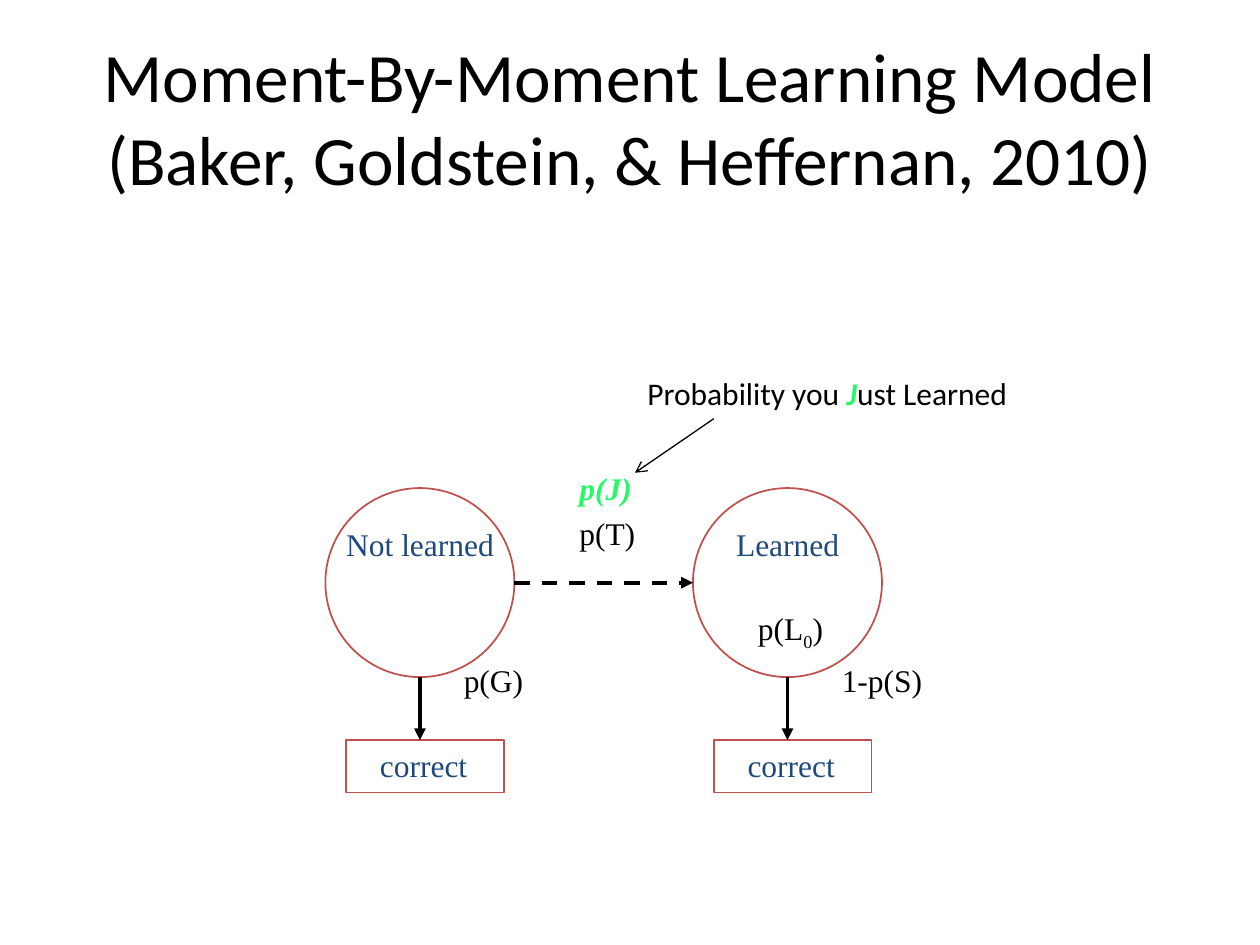
"""Build the Moment-By-Moment Learning Model slide."""
from lxml import etree
from pptx import Presentation
from pptx.dml.color import RGBColor
from pptx.enum.dml import MSO_LINE
from pptx.enum.shapes import MSO_CONNECTOR, MSO_SHAPE
from pptx.enum.text import MSO_ANCHOR, PP_ALIGN
from pptx.oxml.ns import qn
from pptx.util import Cm, Pt

STRAIGHT, DASH = MSO_CONNECTOR.STRAIGHT, MSO_LINE.DASH
OVAL, RECTANGLE = MSO_SHAPE.OVAL, MSO_SHAPE.RECTANGLE
LEFT, CENTER = PP_ALIGN.LEFT, PP_ALIGN.CENTER
TOP, MIDDLE = MSO_ANCHOR.TOP, MSO_ANCHOR.MIDDLE
BLACK, NAVY, RED, GREEN = "000000", "1F497D", "C0504D", "28F868"
SERIF = {"name": "Times New Roman", "size": Pt(18)}
SANS = {"name": "Calibri", "size": Pt(18)}
TITLE = {"name": "Calibri", "size": Pt(39.6)}
EMPHASIS = {"bold": True, "italic": True}

color = RGBColor.from_string
prs = Presentation()
prs.slide_width, prs.slide_height = Cm(25.4), Cm(19.05)
slide = prs.slides.add_slide(prs.slide_layouts[6])


def write(box, parts, align=LEFT, anchor=TOP):
    frame = slide.shapes.add_textbox(*map(Cm, box)).text_frame
    frame.word_wrap, frame.vertical_anchor = True, anchor
    paragraph = frame.paragraphs[0]
    paragraph.alignment = align
    runs = []
    for words, ink, font_format in parts:
        if runs and words.startswith("\v"):
            paragraph.add_line_break()
        run = paragraph.add_run()
        run.text = words.lstrip("\v")
        run.font.color.rgb = color(ink)
        for attribute, value in font_format.items():
            setattr(run.font, attribute, value)
        runs.append(run)
    return runs


def arrow(start, end, width, head, dash=None):
    connector = slide.shapes.add_connector(STRAIGHT, *map(Cm, start + end))
    connector.line.color.rgb = color(BLACK)
    connector.line.width = Pt(width)
    if dash:
        connector.line.dash_style = dash
    etree.SubElement(connector.line._get_or_add_ln(), qn("a:tailEnd"), type=head)
    etree.SubElement(connector._element.spPr, qn("a:effectLst"))


write((1.27, 0.76, 22.86, 3.18),
      [("Moment-By-Moment Learning Model", BLACK, TITLE),
       ("\v(Baker, Goldstein, & Heffernan, 2010)", BLACK, TITLE)],
      CENTER, MIDDLE)

diameter, state_top, answer_top = 3.81, 9.84, 14.92
state_bottom = state_top + diameter
not_learned_left, learned_left = 6.56, 13.97

for state_left, state, chance, chance_left in (
        (not_learned_left, "Not learned", "p(G)", 9.1),
        (learned_left, "Learned", "1-p(S)", 16.72)):
    for kind, box in (
            (OVAL, (state_left, state_top, diameter, diameter)),
            (RECTANGLE, (state_left + 0.42, answer_top, 3.18, 1.06))):
        outline = slide.shapes.add_shape(kind, *map(Cm, box))
        outline.shadow.inherit = False
        outline.fill.background()
        outline.line.color.rgb = color(RED)
        outline.line.width = Pt(1)
    write((state_left - 0.42, 10.46, 4.66, 1.02), [(state, NAVY, SERIF)], CENTER)
    write((state_left + 0.85, answer_top, 2.96, 1.02), [("correct", NAVY, SERIF)])
    write((chance_left, 13.2, 2.96, 1.02), [(chance, BLACK, SERIF)])
    center = state_left + diameter / 2
    arrow((center, state_bottom), (center, answer_top), 2.25, "triangle")

state_middle = state_top + diameter / 2
arrow((not_learned_left + diameter, state_middle), (learned_left, state_middle),
      2.25, "triangle", DASH)
write((11.43, 10.23, 1.7, 1.02), [("p(T)", BLACK, SERIF)])
write((11.43, 9.33, 1.7, 1.02), [("p(J)", GREEN, SERIF | EMPHASIS)])

initial = write((15.03, 12.15, 2.54, 1.02),
                [("p(L", BLACK, SERIF), ("0", BLACK, SERIF), (")", BLACK, SERIF)])
initial[1].font._element.set("baseline", "-25000")

write((12.8, 7.42, 9.86, 1.02),
      [("Probability you ", BLACK, SANS), ("J", GREEN, SANS | EMPHASIS),
       ("ust Learned", BLACK, SANS)])
arrow((14.39, 8.44), (12.8, 9.53), 0.75, "arrow")

prs.save("out.pptx")
